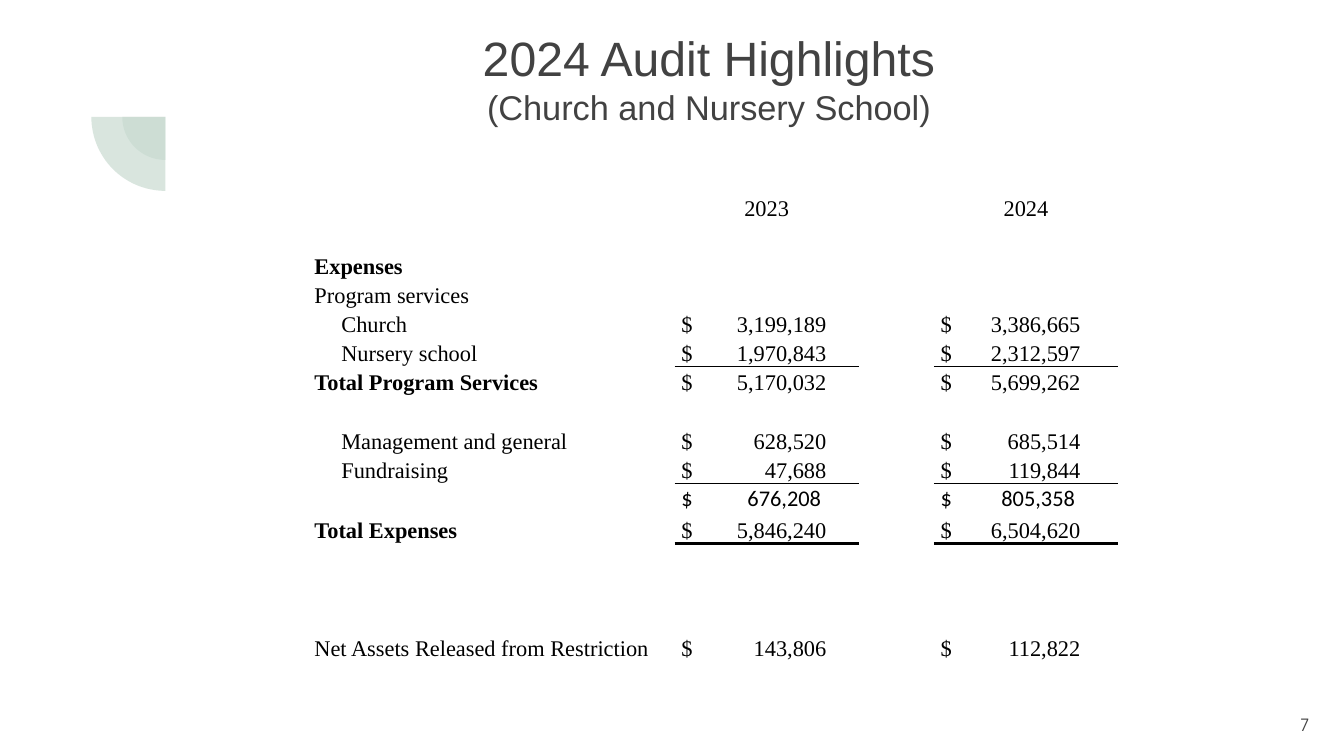
from dataclasses import dataclass
import math

from lxml import etree
from pptx import Presentation
from pptx import util as u
from pptx.dml.color import RGBColor
from pptx.enum import text
from pptx.oxml.ns import qn


@dataclass(frozen=True)
class Theme:
    ink: str = "000000"
    grey: str = "424242"
    sage: str = "C9DBD1"
    sage_alpha: int = 70
    title_font: str = "Arial"
    table_font: str = "Times New Roman"
    subtotal_font: str = "Calibri"
    number_font: str = "TeX Gyre Adventor"
    title_size: float = 25.8
    subtitle_size: float = 18.4
    table_size: float = 12
    number_size: float = 9
    plain_table: str = "{2D5ABB26-0587-4C30-8999-92F81FD0307C}"


# Label, style, 2023, 2024, points of the rule below the amounts
ROWS = [
    ("", "head", "2023", "2024", 0),
    ("", "", "", "", 0),
    ("Expenses", "bold", "", "", 0),
    ("Program services", "", "", "", 0),
    ("Church", "indent", "3,199,189", "3,386,665", 0),
    ("Nursery school", "indent", "1,970,843", "2,312,597", 0.5),
    ("Total Program Services", "bold", "5,170,032", "5,699,262", 0),
    ("", "", "", "", 0),
    ("Management and general", "indent", "628,520", "685,514", 0),
    ("Fundraising", "indent", "47,688", "119,844", 0.5),
    ("", "subtotal", "676,208", "805,358", 0),
    ("Total Expenses", "bold", "5,846,240", "6,504,620", 2),
    ("", "", "", "", 0),
    ("", "", "", "", 0),
    ("Net Assets Released from Restriction", "", "143,806", "112,822", 0),
]
COLUMNS = [2.69, 1.37, 0.56, 1.37]
ROW_HEIGHTS = [u.Pt(15.6)] * 11 + [u.Inches(h) for h in (0.23, 0.23, 0.22, 0.43)]
AMOUNT_TABS = {1: 1.08, 3: 1.04}  # right tab stop in each amount column
SUBTOTAL_SHIFT = 0.04


class SlideBuilder:
    def __init__(self, prs, theme):
        self.theme = theme
        self.s = prs.slides.add_slide(prs.slide_layouts[5])

    def run(self, p, words, font, size, color, bold=False):
        r = p.add_run()
        r.text = words
        r.font.name, r.font.size, r.font.bold = font, u.Pt(size), bold
        r.font.color.rgb = RGBColor.from_string(color)

    def margins(self, box, left, top, right, bottom):
        box.margin_left, box.margin_top = u.Inches(left), u.Inches(top)
        box.margin_right, box.margin_bottom = u.Inches(right), u.Inches(bottom)

    def quarter_disc(self, right, top, radius):
        """Lower-left quarter of a disc centred on (right, top)."""
        angles = [math.radians(90 + 3 * i) for i in range(31)]
        points = [(u.Inches(right + radius * math.cos(a)),
                   u.Inches(top + radius * math.sin(a))) for a in angles]
        outline = self.s.shapes.build_freeform(u.Inches(right), u.Inches(top))
        outline.add_line_segments(points, close=True)
        sp = outline.convert_to_shape()
        sp.shadow.inherit = False
        sp.line.fill.background()
        sp.fill.solid()
        sp.fill.fore_color.rgb = RGBColor.from_string(self.theme.sage)
        color = sp._element.spPr.find(".//" + qn("a:srgbClr"))
        etree.SubElement(color, qn("a:alpha"), val=str(self.theme.sage_alpha * 1000))

    def title(self, heading, subheading, left, top, width, height):
        t, sp = self.theme, self.s.shapes.title
        sp.left, sp.top = u.Inches(left), u.Inches(top)
        sp.width, sp.height = u.Inches(width), u.Inches(height)
        tf = sp.text_frame
        tf.word_wrap, tf.auto_size = True, text.MSO_AUTO_SIZE.NONE
        tf.vertical_anchor = text.MSO_ANCHOR.TOP
        self.margins(tf, 0.1, 0.1, 0.1, 0.1)
        p = tf.paragraphs[0]
        p.alignment = text.PP_ALIGN.CENTER
        self.run(p, heading, t.title_font, t.title_size, t.grey)
        p.add_line_break()
        self.run(p, subheading, t.title_font, t.subtitle_size, t.grey)

    def rule_below(self, cell, points):
        ln = etree.Element(qn("a:lnB"), w=str(u.Pt(points)))
        fill = etree.SubElement(ln, qn("a:solidFill"))
        etree.SubElement(fill, qn("a:srgbClr"), val=self.theme.ink)
        cell._tc.get_or_add_tcPr().insert(0, ln)

    def cell(self, cell, words, style, tab=None):
        t = self.theme
        cell.fill.background()
        cell.vertical_anchor = text.MSO_ANCHOR.BOTTOM
        p = cell.text_frame.paragraphs[0]
        is_amount = tab and words and style != "head"
        left = 0.05 if is_amount else 0.21 if style == "indent" else 0.01
        self.margins(cell, left, 0.01, 0.01, 0)
        if not words:
            etree.SubElement(p._p, qn("a:endParaRPr"), sz=str(t.table_size * 100))
            return
        if is_amount:
            stop = tab - SUBTOTAL_SHIFT if style == "subtotal" else tab
            tabs = etree.SubElement(p._p.get_or_add_pPr(), qn("a:tabLst"))
            etree.SubElement(tabs, qn("a:tab"), pos=str(u.Inches(stop)), algn="r")
            words = "$\t" + words
        elif style == "head":
            p.alignment = text.PP_ALIGN.CENTER
        font = t.subtotal_font if style == "subtotal" else t.table_font
        self.run(p, words, font, t.table_size, t.ink, style == "bold" and not tab)

    def table(self, rows, left, top):
        frame = self.s.shapes.add_table(
            len(rows), len(COLUMNS), u.Inches(left), u.Inches(top),
            u.Inches(sum(COLUMNS)), sum(ROW_HEIGHTS))
        table = frame.table
        table.first_row = table.horz_banding = False
        table._tbl.tblPr.find(qn("a:tableStyleId")).text = self.theme.plain_table
        for column, width in zip(table.columns, COLUMNS):
            column.width = u.Inches(width)
        for row, height in zip(table.rows, ROW_HEIGHTS):
            row.height = height
        for i, (label, style, before, after, points) in enumerate(rows):
            for j, words in enumerate((label, before, "", after)):
                self.cell(table.cell(i, j), words, style, AMOUNT_TABS.get(j))
                if points and j in AMOUNT_TABS:
                    self.rule_below(table.cell(i, j), points)

    def page_number(self, number, left, top, size):
        t = self.theme
        sp = self.s.shapes.add_textbox(
            u.Inches(left), u.Inches(top), u.Inches(size), u.Inches(size))
        tf = sp.text_frame
        tf.word_wrap = True
        tf.vertical_anchor = text.MSO_ANCHOR.MIDDLE
        self.margins(tf, 0.1, 0.1, 0.1, 0.1)
        p = tf.paragraphs[0]
        p.alignment = text.PP_ALIGN.RIGHT
        self.run(p, number, t.number_font, t.number_size, t.grey)


def main():
    prs = Presentation()
    prs.slide_width = u.Inches(10)
    prs.slide_height = prs.slide_width * 9 // 16
    slide = SlideBuilder(prs, Theme())

    # Corner ornament
    for radius in (0.32, 0.55):
        slide.quarter_disc(1.23, 0.87, radius)

    # Heading, figures and page number
    slide.title("2024 Audit Highlights", "(Church and Nursery School)",
                1.43, 0.11, 7.69, 0.98)
    slide.table(ROWS, 2.33, 1.43)
    slide.page_number("7", 9.49, 5.22, 0.35)

    prs.save("out.pptx")


if __name__ == "__main__":
    main()
